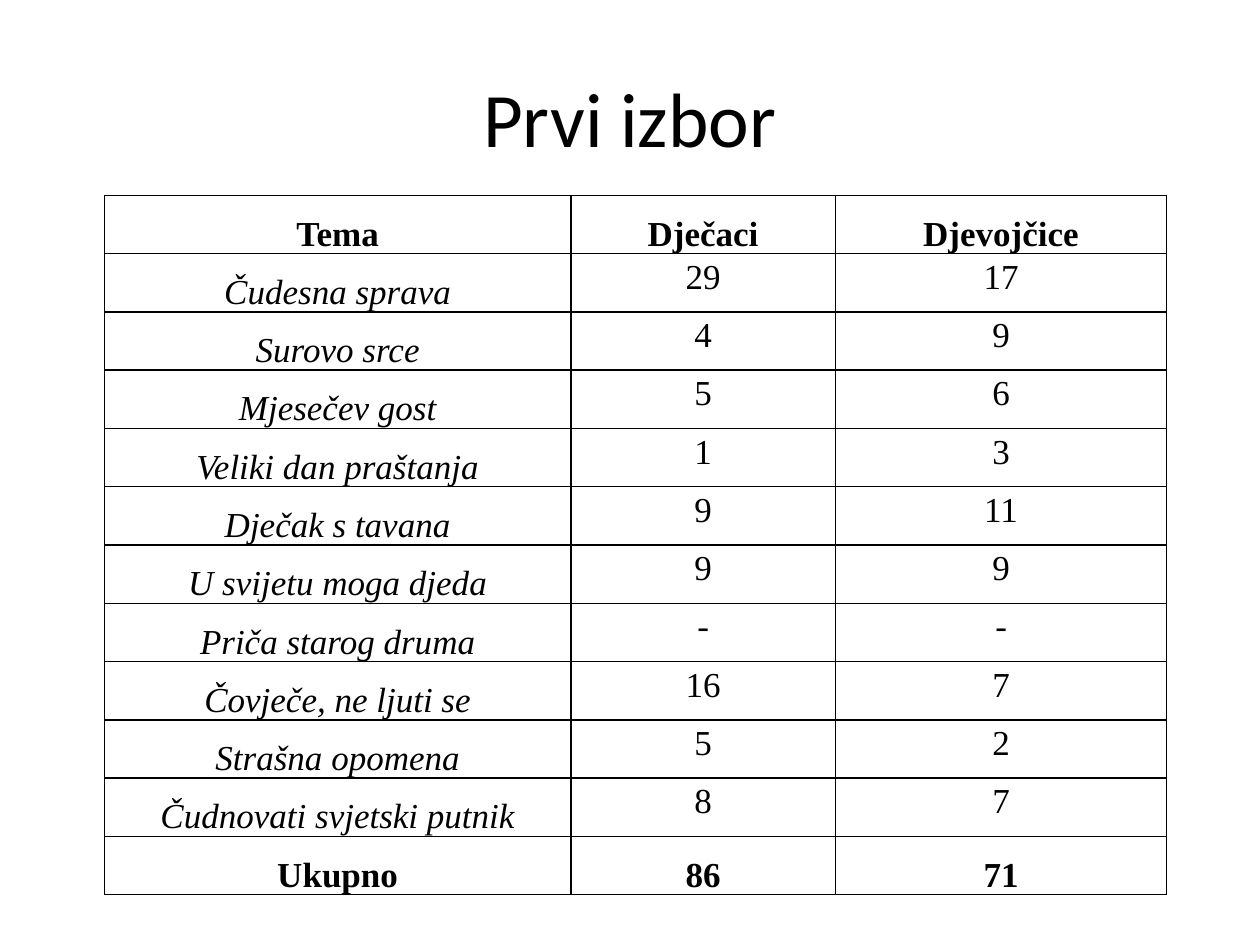
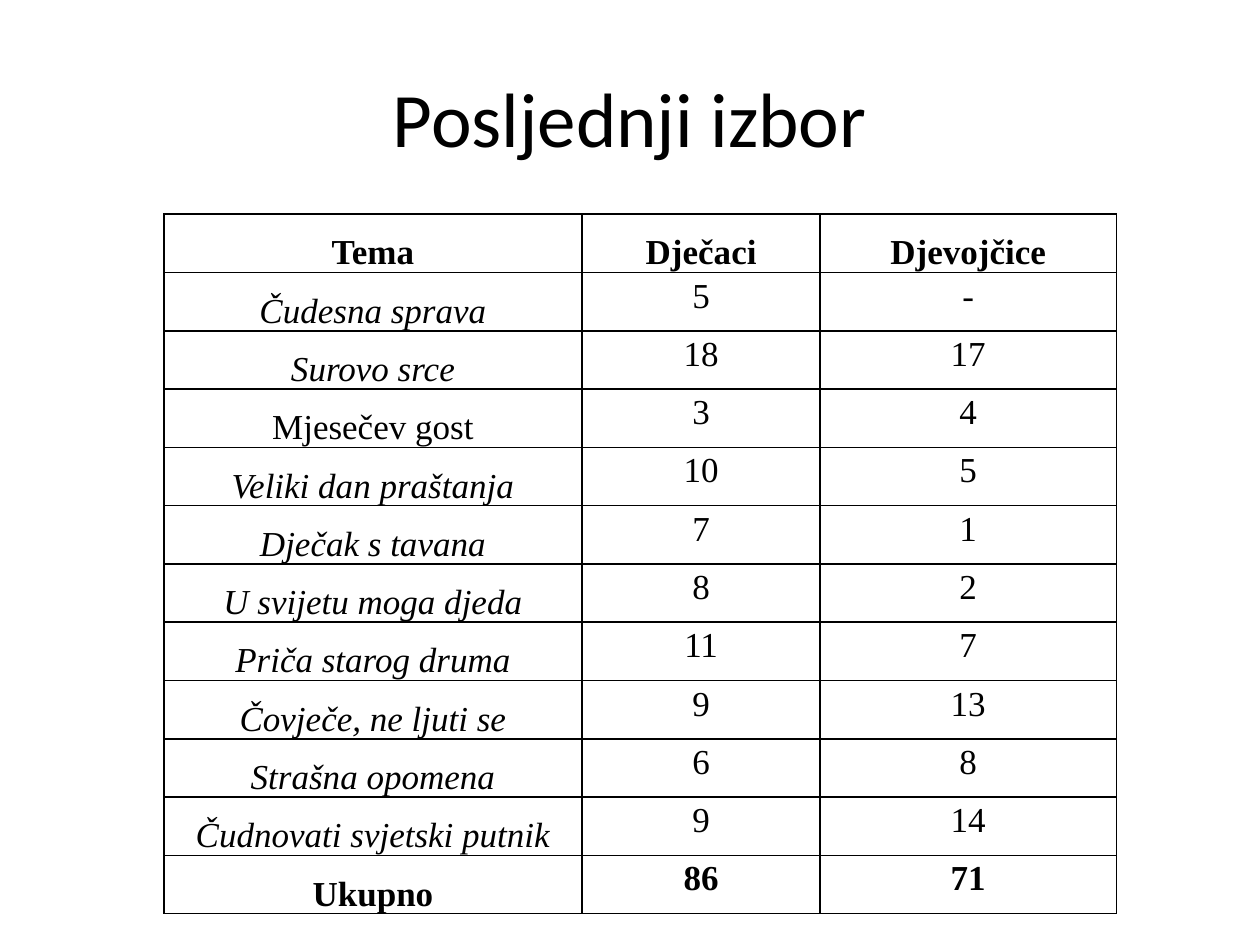
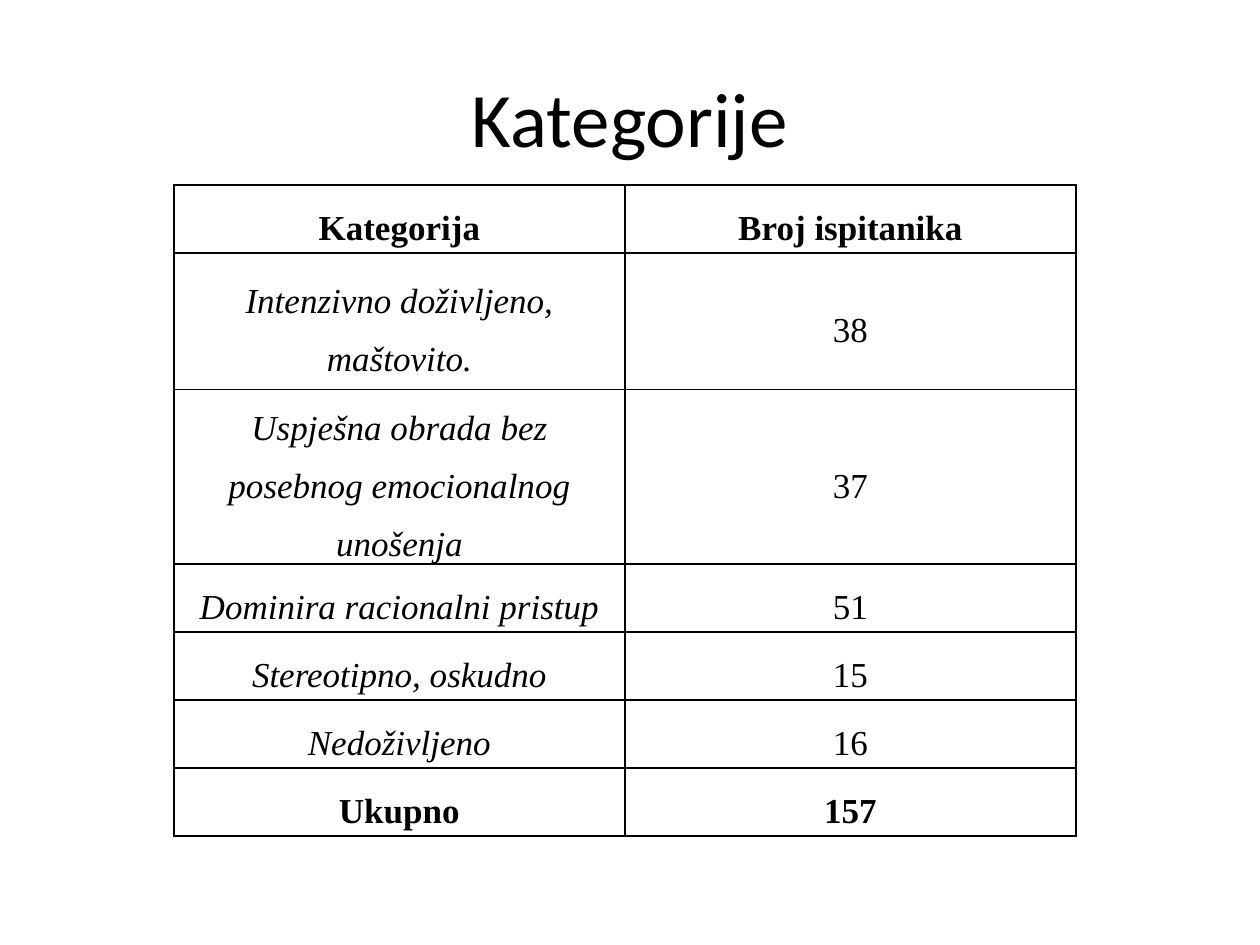
"""Build three slides of survey tables on theme choices and response categories."""
from dataclasses import dataclass

from lxml import etree
from pptx import Presentation
from pptx.dml.color import RGBColor
from pptx.enum.text import MSO_ANCHOR, PP_ALIGN
from pptx.oxml.ns import qn
from pptx.util import Inches, Pt

CENTER = PP_ALIGN.CENTER
MIDDLE = MSO_ANCHOR.MIDDLE
BLANK_LAYOUT = 6


@dataclass(frozen=True)
class Theme:
    ink: str = "000000"
    paper: str = "FFFFFF"
    title_font: str = "Calibri"
    table_font: str = "Times New Roman"
    title_size: int = 44
    table_size: int = 20
    border: float = 1
    loose: float = 33.3
    tight: float = 16
    tight_indent: float = 0.04
    cell_margin: float = 0.07


THEME = Theme()
TITLE_BOX = (0.5, 0.3, 9, 1.25)

THEMES = [
    "Čudesna sprava", "Surovo srce", "Mjesečev gost", "Veliki dan praštanja",
    "Dječak s tavana", "U svijetu moga djeda", "Priča starog druma",
    "Čovječe, ne ljuti se", "Strašna opomena", "Čudnovati svjetski putnik",
]
CHOICE_HEADER = ("Tema", "Dječaci", "Djevojčice")
CHOICE_TOTAL = ("Ukupno", "86", "71")
FIRST_BOYS = ["29", "4", "5", "1", "9", "9", "-", "16", "5", "8"]
FIRST_GIRLS = ["17", "9", "6", "3", "11", "9", "-", "7", "2", "7"]
LAST_BOYS = ["5", "18", "3", "10", "7", "8", "11", "9", "6", "9"]
LAST_GIRLS = ["-", "17", "4", "5", "1", "2", "7", "13", "8", "14"]
CATEGORIES = [
    ("Intenzivno doživljeno, maštovito.", "38"),
    ("Uspješna obrada bez posebnog emocionalnog unošenja", "37"),
    ("Dominira racionalni pristup", "51"),
    ("Stereotipno, oskudno", "15"),
    ("Nedoživljeno", "16"),
]

SLIDES = [
    dict(
        title="Prvi izbor",
        rows=[CHOICE_HEADER, *zip(THEMES, FIRST_BOYS, FIRST_GIRLS), CHOICE_TOTAL],
        corner=(0.83, 1.55), widths=(3.7, 2.1, 2.63), heights=[0.42] * 12,
        tight_counts=True, tight_total=False, upright=(),
    ),
    dict(
        title="Posljednji izbor",
        rows=[CHOICE_HEADER, *zip(THEMES, LAST_BOYS, LAST_GIRLS), CHOICE_TOTAL],
        corner=(1.3, 1.7), widths=(3.32, 1.89, 2.35), heights=[0.41] * 12,
        tight_counts=True, tight_total=True, upright=("Mjesečev gost",),
    ),
    dict(
        title="Kategorije",
        rows=[("Kategorija", "Broj ispitanika"), *CATEGORIES, ("Ukupno", "157")],
        corner=(1.38, 1.47), widths=(3.58, 3.58),
        heights=[0.54, 1.08, 1.08] + [0.54] * 4,
        tight_counts=False, tight_total=False, upright=(),
    ),
]


def write(frame, text, *, font, size, bold=False, italic=False, spacing=None, indent=0):
    paragraph = frame.paragraphs[0]
    paragraph.alignment = CENTER
    if spacing:
        paragraph.line_spacing = Pt(spacing)
    if indent:
        properties = paragraph._p.get_or_add_pPr()
        for side in ("marL", "marR"):
            properties.set(side, str(Inches(indent)))
        properties.set("indent", "0")
    run = paragraph.add_run()
    run.text = text
    run.font.name = font
    run.font.size = Pt(size)
    run.font.bold = bold
    run.font.italic = italic
    run.font.color.rgb = RGBColor.from_string(THEME.ink)


def add_title(slide, text):
    frame = slide.shapes.add_textbox(*map(Inches, TITLE_BOX)).text_frame
    frame.word_wrap = True
    frame.vertical_anchor = MIDDLE
    write(frame, text, font=THEME.title_font, size=THEME.title_size)


def style_cell(cell):
    cell.vertical_anchor = MIDDLE
    cell.margin_left = cell.margin_right = Inches(THEME.cell_margin)
    cell.margin_top = cell.margin_bottom = 0
    properties = cell._tc.get_or_add_tcPr()
    for side in ("a:lnL", "a:lnR", "a:lnT", "a:lnB"):
        line = etree.SubElement(properties, qn(side), w=str(Pt(THEME.border)))
        fill = etree.SubElement(line, qn("a:solidFill"))
        etree.SubElement(fill, qn("a:srgbClr"), val=THEME.ink)
    cell.fill.background()


def add_results(slide, content):
    rows, widths, heights = content["rows"], content["widths"], content["heights"]
    box = (*content["corner"], sum(widths), sum(heights))
    table = slide.shapes.add_table(len(rows), len(widths), *map(Inches, box)).table
    table.first_row = table.horz_banding = False
    for column, width in zip(table.columns, widths):
        column.width = Inches(width)
    last = len(rows) - 1
    for r, (row, height) in enumerate(zip(rows, heights)):
        table.rows[r].height = Inches(height)
        edge = r in (0, last)
        tight_row = content["tight_total"] if r == last else r > 0 and content["tight_counts"]
        for c, text in enumerate(row):
            cell = table.cell(r, c)
            style_cell(cell)
            tight = tight_row and c > 0
            write(
                cell.text_frame, text, font=THEME.table_font, size=THEME.table_size,
                bold=edge,
                italic=c == 0 and not edge and text not in content["upright"],
                spacing=THEME.tight if tight else THEME.loose,
                indent=THEME.tight_indent if tight else 0,
            )


def main():
    deck = Presentation()
    deck.slide_width, deck.slide_height = Inches(10), Inches(7.5)
    for content in SLIDES:
        slide = deck.slides.add_slide(deck.slide_layouts[BLANK_LAYOUT])
        background = slide.background.fill
        background.solid()
        background.fore_color.rgb = RGBColor.from_string(THEME.paper)
        add_title(slide, content["title"])
        add_results(slide, content)
    deck.save("out.pptx")


if __name__ == "__main__":
    main()
